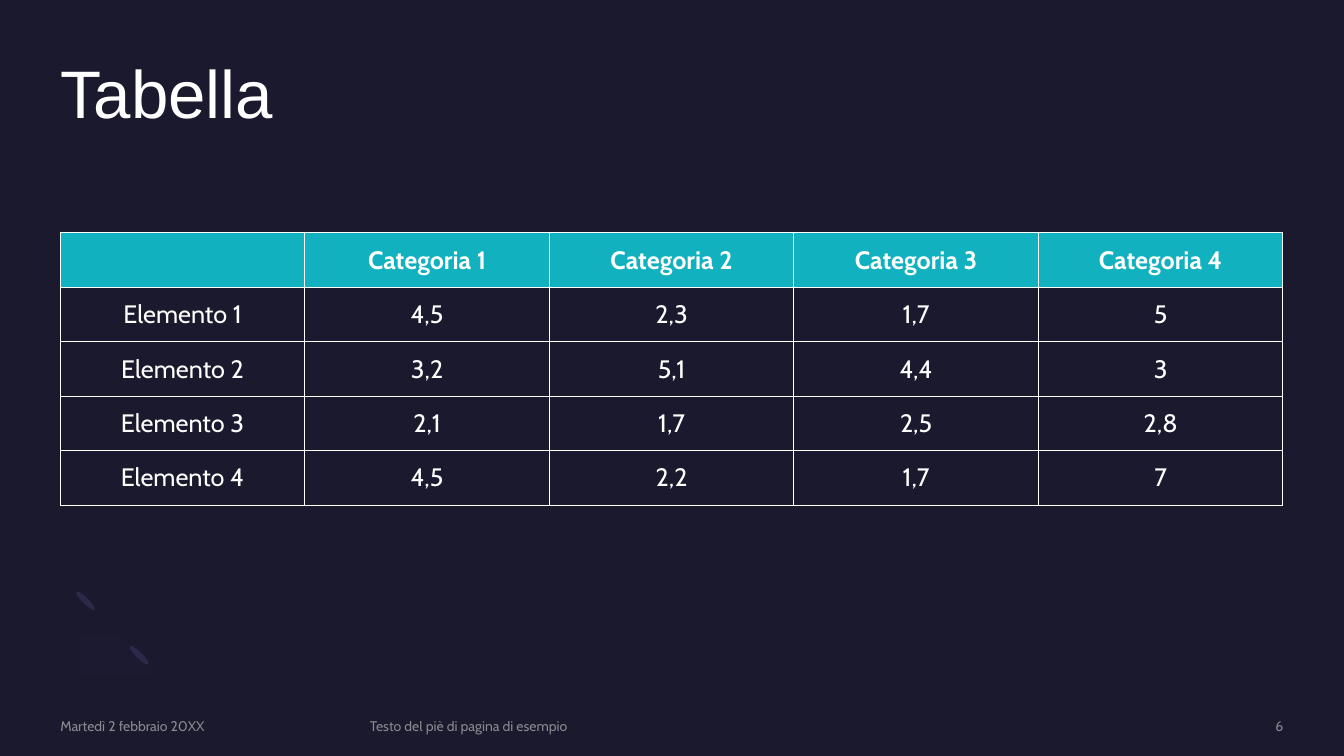
from dataclasses import dataclass

import lxml.etree
import pptx
import pptx.dml.color
import pptx.enum.shapes
import pptx.enum.text
import pptx.oxml.ns
import pptx.util
from pptx.util import Cm

ALIGN = pptx.enum.text.PP_ALIGN
ANCHOR = pptx.enum.text.MSO_ANCHOR
WHITE, NIGHT, TEAL, GREY = "FFFFFF", "1B192E", "12B1BF", "A6A6A6"
PETAL, RING = "2C284A", "7771B2"
MARGIN, CONTENT_WIDTH = 1.52, 30.81

Point = tuple[float, float]


@dataclass
class Footer:
    text: str
    left: float
    width: float
    align: ALIGN = ALIGN.LEFT


FOOTERS = [
    Footer("Martedì 2 febbraio 20XX", MARGIN, 7.32),
    Footer("Testo del piè di pagina di esempio", 9.32, 17.73),
    Footer("6", 27.64, 4.7, ALIGN.RIGHT),
]

ROWS = [
    ["", "Categoria 1", "Categoria 2", "Categoria 3", "Categoria 4"],
    ["Elemento 1", "4,5", "2,3", "1,7", "5"],
    ["Elemento 2", "3,2", "5,1", "4,4", "3"],
    ["Elemento 3", "2,1", "1,7", "2,5", "2,8"],
    ["Elemento 4", "4,5", "2,2", "1,7", "7"],
]

PETALS = [(3.43, 16.18), (2.08, 14.81)]

# Ring outline in cm: one point is a straight side, three are a Bézier curve
RING_START = (1.93, 16.74)
RING_PARTS = [
    [(1.42, 16.23), (1.47, 15.37), (2.06, 14.78)],
    [(2.51, 15.24)],
    [(2.21, 15.52), (2.18, 15.98), (2.44, 16.21)],
    [(2.69, 16.46), (3.12, 16.43), (3.43, 16.15)],
    [(3.86, 16.61)],
    [(3.3, 17.17), (2.41, 17.25), RING_START],
]


def rgb(value: str) -> pptx.dml.color.RGBColor:
    return pptx.dml.color.RGBColor.from_string(value)


def set_alpha(element, percent: float) -> None:
    for color in element.xpath(".//a:solidFill/a:srgbClr"):
        alpha = lxml.etree.SubElement(color, pptx.oxml.ns.qn("a:alpha"))
        alpha.set("val", str(int(percent * 1000)))


def write(frame, text: str, *, size: float, font: str = "Cabin", color: str = WHITE,
          bold: bool = False, align: ALIGN = ALIGN.LEFT, spacing: float = 1.0,
          alpha: float = 100) -> None:
    para = frame.paragraphs[0]
    para.alignment = align
    para.line_spacing = spacing
    span = para.add_run()
    span.text = text
    span.font.size = pptx.util.Pt(size)
    span.font.name = font
    span.font.bold = bold
    span.font.color.rgb = rgb(color)
    if alpha < 100:
        set_alpha(para._p, alpha)


def prepare_frame(frame, anchor: ANCHOR) -> None:
    frame.word_wrap = True
    frame.auto_size = pptx.enum.text.MSO_AUTO_SIZE.NONE
    frame.vertical_anchor = anchor
    frame.margin_left = frame.margin_right = 0
    frame.margin_top = frame.margin_bottom = 0


def paint(shape, color: str) -> None:
    shape.shadow.inherit = False
    shape.fill.solid()
    shape.fill.fore_color.rgb = rgb(color)
    shape.line.fill.background()


def curve(start: Point, controls: list[Point], steps: int = 12) -> list[Point]:
    knots = [start, *controls]
    points = []
    for step in range(1, steps + 1):
        t = step / steps
        weights = ((1 - t) ** 3, 3 * t * (1 - t) ** 2, 3 * t * t * (1 - t), t ** 3)
        points.append((sum(w * x for w, (x, _) in zip(weights, knots)),
                       sum(w * y for w, (_, y) in zip(weights, knots))))
    return points


def add_ornament(page) -> None:
    for left, top in PETALS:
        petal = page.shapes.add_shape(pptx.enum.shapes.MSO_SHAPE.OVAL,
                                      Cm(left), Cm(top), Cm(0.15), Cm(0.66))
        petal.rotation = 135
        paint(petal, PETAL)

    outline, last = [], RING_START
    for part in RING_PARTS:
        outline += curve(last, part) if len(part) == 3 else part
        last = part[-1]
    builder = page.shapes.build_freeform(*RING_START, scale=Cm(1))
    builder.add_line_segments(outline, close=True)
    ring = builder.convert_to_shape()
    paint(ring, RING)
    set_alpha(ring._element, 2)


def add_borders(cell, color: str, width: float) -> None:
    properties = cell._tc.get_or_add_tcPr()
    for side in ("lnL", "lnR", "lnT", "lnB"):
        line = lxml.etree.SubElement(properties, pptx.oxml.ns.qn(f"a:{side}"))
        line.set("w", str(int(pptx.util.Pt(width))))
        fill = lxml.etree.SubElement(line, pptx.oxml.ns.qn("a:solidFill"))
        lxml.etree.SubElement(fill, pptx.oxml.ns.qn("a:srgbClr")).set("val", color)


def add_data_table(page) -> None:
    table = page.shapes.add_table(len(ROWS), len(ROWS[0]), Cm(MARGIN), Cm(5.87),
                                  Cm(CONTENT_WIDTH), Cm(6.86)).table
    table.first_row = table.horz_banding = False
    for row, texts in enumerate(ROWS):
        for column, text in enumerate(texts):
            cell = table.cell(row, column)
            cell.vertical_anchor = ANCHOR.MIDDLE
            add_borders(cell, WHITE, 0.75)
            if row == 0:
                cell.fill.solid()
                cell.fill.fore_color.rgb = rgb(TEAL)
            else:
                cell.fill.background()
            if text:
                write(cell.text_frame, text, size=18, bold=row == 0, align=ALIGN.CENTER)


def add_footer(page, footer: Footer) -> None:
    box = page.shapes.add_textbox(Cm(footer.left), Cm(18.08), Cm(footer.width), Cm(0.43))
    prepare_frame(box.text_frame, ANCHOR.MIDDLE)
    write(box.text_frame, footer.text, size=10, color=GREY, align=footer.align, alpha=80)


def main() -> None:
    deck = pptx.Presentation()
    deck.slide_width, deck.slide_height = Cm(33.87), Cm(19.05)
    page = deck.slides.add_slide(deck.slide_layouts[5])
    page.background.fill.solid()
    page.background.fill.fore_color.rgb = rgb(NIGHT)

    # Title
    title = page.shapes.title
    title.left, title.top = Cm(MARGIN), Cm(1.52)
    title.width, title.height = Cm(CONTENT_WIDTH), Cm(3.71)
    prepare_frame(title.text_frame, ANCHOR.TOP)
    write(title.text_frame, "Tabella", size=48, font="Arial", spacing=0.9)

    # Ornament, table and footer line
    add_ornament(page)
    add_data_table(page)
    for footer in FOOTERS:
        add_footer(page, footer)

    deck.save("out.pptx")


if __name__ == "__main__":
    main()
